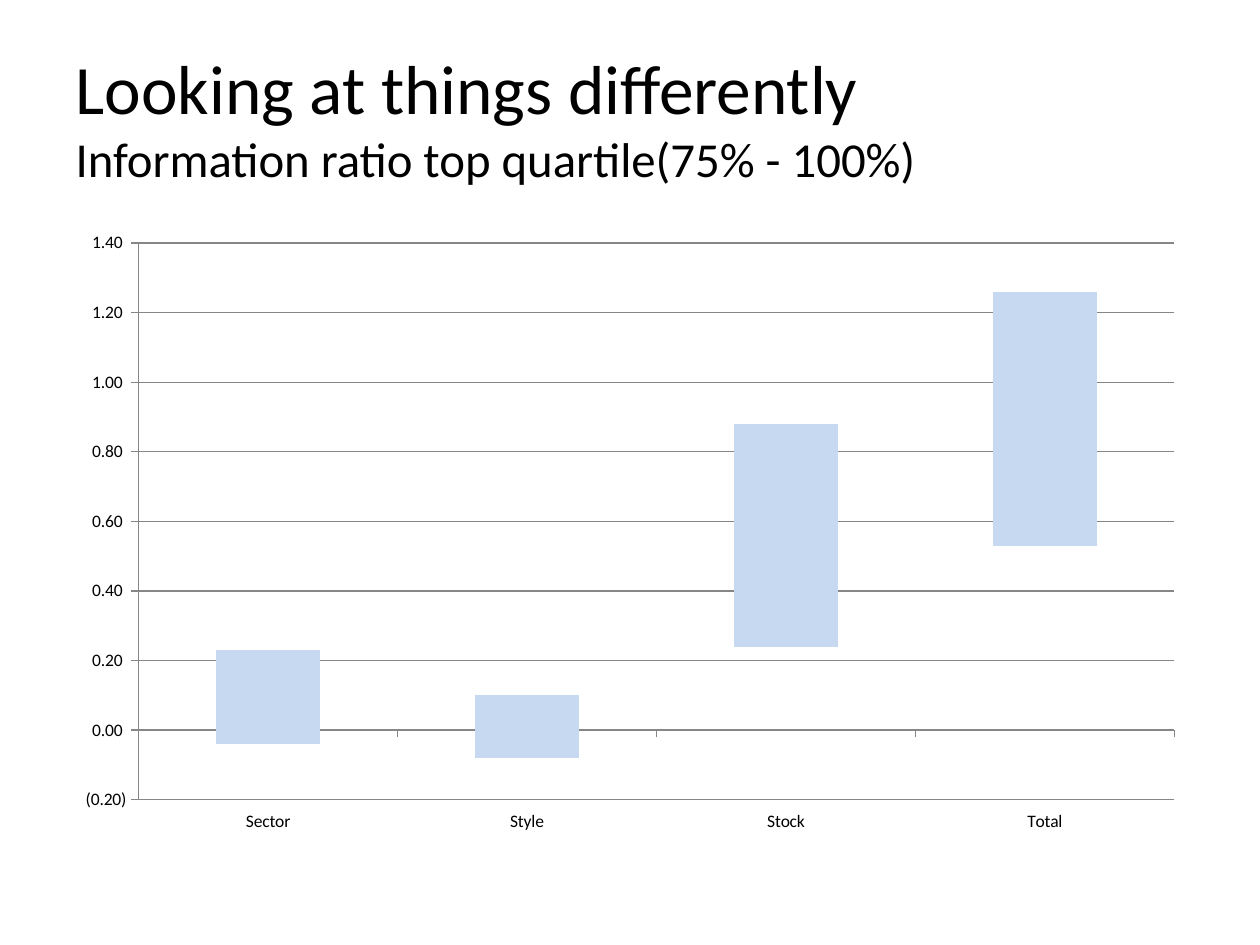
from dataclasses import dataclass

from pptx import Presentation
from pptx.chart.data import CategoryChartData
from pptx.dml.color import RGBColor
from pptx.enum.chart import XL_CHART_TYPE as ChartType, XL_TICK_LABEL_POSITION as LabelPosition, XL_TICK_MARK as TickMark
from pptx.enum.text import MSO_ANCHOR as Anchor, MSO_AUTO_SIZE as AutoSize, PP_ALIGN as Align
from pptx.util import Cm, Pt

TITLE = "Looking at things differently"
SUBTITLE = "Information ratio top quartile(75% - 100%)"
CATEGORIES = ["Sector", "Style", "Stock", "Total"]
ZEROS = (0, 0, 0, 0)
SERIES = [
    ((0, 0, 0.24, 0.53), None),
    (ZEROS, "17375E"),
    (ZEROS, "558ED5"),
    (ZEROS, "8EB4E3"),
    ((0.23, 0.1, 0.64, 0.73), "C6D9F1"),
    (ZEROS, None),
    (ZEROS, "C6D9F1"),
    (ZEROS, "8EB4E3"),
    (ZEROS, "558ED5"),
    ((-0.04, -0.08, 0, 0), "C6D9F1"),
]


@dataclass(frozen=True)
class Theme:
    font: str = "Calibri"
    text: str = "000000"
    line: str = "868686"
    title_size: float = 39.6
    subtitle_size: float = 27.9
    chart_size: float = 10


THEME = Theme()
MARGIN, CONTENT_WIDTH = Cm(1.27), Cm(22.86)
TITLE_BOX = (MARGIN, Cm(0.76), CONTENT_WIDTH, Cm(3.18))
CHART_BOX = (MARGIN, Cm(4.45), CONTENT_WIDTH, Cm(12.57))


def format_font(font, size):
    font.name = THEME.font
    font.size = Pt(size)
    font.color.rgb = RGBColor.from_string(THEME.text)


def add_text(paragraph, text, size):
    run = paragraph.add_run()
    run.text = text
    format_font(run.font, size)


def format_line(line):
    line.color.rgb = RGBColor.from_string(THEME.line)
    line.width = Pt(0.75)


def add_title(slide):
    shape = slide.shapes.title
    shape.left, shape.top, shape.width, shape.height = TITLE_BOX
    frame = shape.text_frame
    frame.word_wrap = True
    frame.auto_size = AutoSize.NONE
    frame.vertical_anchor = Anchor.MIDDLE
    paragraph = frame.paragraphs[0]
    paragraph.alignment = Align.LEFT
    add_text(paragraph, TITLE, THEME.title_size)
    paragraph.add_line_break()
    add_text(paragraph, SUBTITLE, THEME.subtitle_size)


def add_ratio_chart(slide):
    data = CategoryChartData()
    data.categories = CATEGORIES
    for number, (values, _) in enumerate(SERIES, 1):
        data.add_series(f"Series {number}", values)
    chart = slide.shapes.add_chart(ChartType.COLUMN_STACKED, *CHART_BOX, data).chart
    chart.has_legend = False
    chart.has_title = False
    format_font(chart.font, THEME.chart_size)

    plot = chart.plots[0]
    plot.vary_by_categories = False
    plot.gap_width = 150
    plot.overlap = 100
    for series, (_, color) in zip(plot.series, SERIES):
        series.invert_if_negative = False
        series.format.line.fill.background()
        fill = series.format.fill
        if color:
            fill.solid()
            fill.fore_color.rgb = RGBColor.from_string(color)
        else:
            fill.background()

    for axis in (chart.category_axis, chart.value_axis):
        axis.major_tick_mark = TickMark.OUTSIDE
        axis.minor_tick_mark = TickMark.NONE
        format_line(axis.format.line)
    chart.category_axis.tick_label_position = LabelPosition.LOW
    value_axis = chart.value_axis
    value_axis.minimum_scale, value_axis.maximum_scale, value_axis.major_unit = -0.2, 1.4, 0.2
    value_axis.has_major_gridlines = True
    format_line(value_axis.major_gridlines.format.line)
    value_axis.tick_labels.number_format = r"#,##0.00_);\(#,##0.00\)"
    value_axis.tick_labels.number_format_is_linked = False


def main():
    presentation = Presentation()
    presentation.slide_width, presentation.slide_height = Cm(25.4), Cm(19.05)
    slide = presentation.slides.add_slide(presentation.slide_layouts.get_by_name("Title Only"))
    add_title(slide)
    add_ratio_chart(slide)
    presentation.save("out.pptx")


if __name__ == "__main__":
    main()
